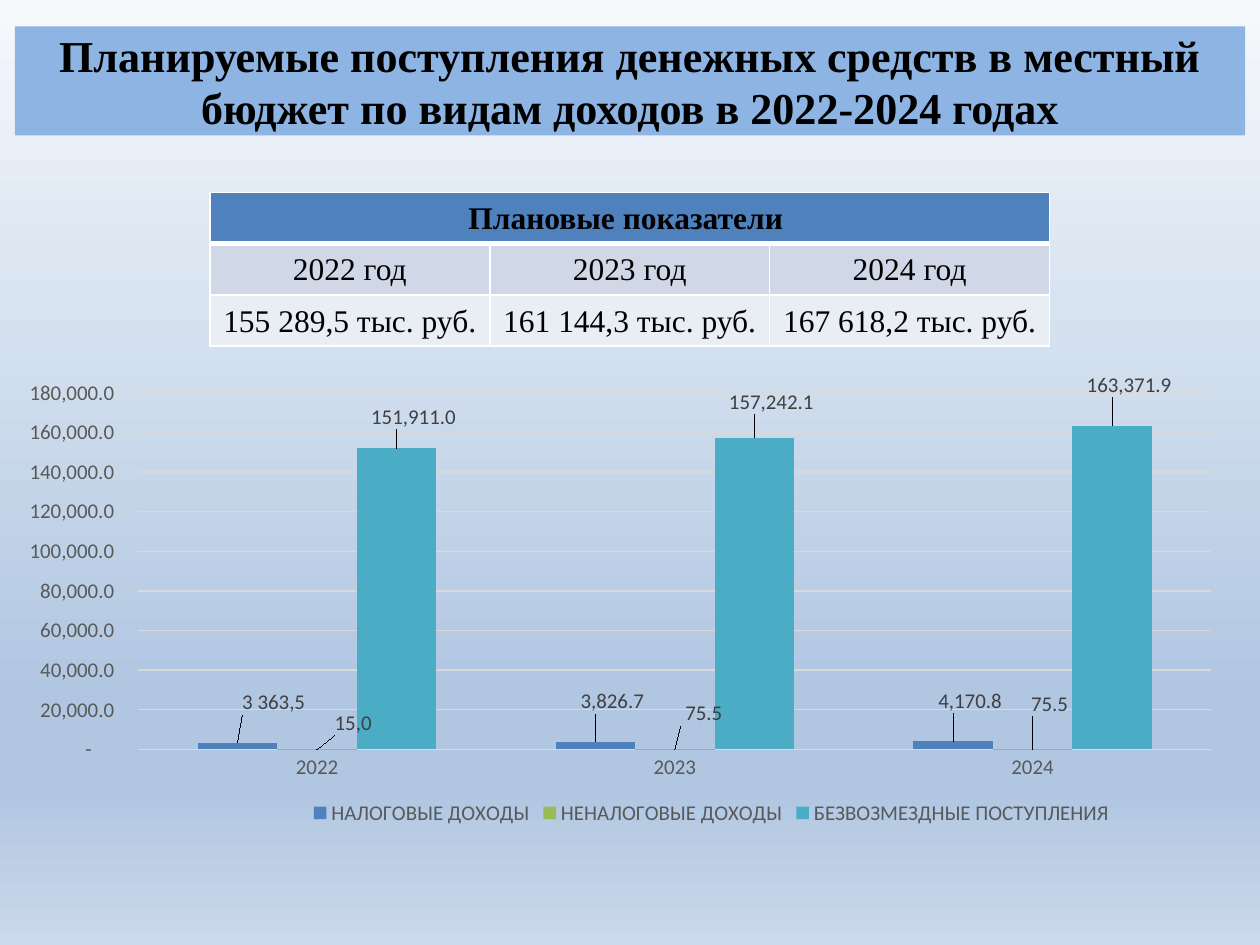
from copy import deepcopy
from dataclasses import dataclass

from lxml import etree
from pptx import Presentation
from pptx.chart.data import CategoryChartData
from pptx.dml.color import RGBColor
from pptx.enum.chart import XL_CHART_TYPE, XL_LABEL_POSITION, XL_LEGEND_POSITION, XL_TICK_MARK
from pptx.enum.text import MSO_ANCHOR, MSO_AUTO_SIZE, PP_ALIGN
from pptx.oxml import parse_xml
from pptx.oxml.ns import nsdecls, qn
from pptx.util import Cm, Pt

CENTER = PP_ALIGN.CENTER
MIDDLE = MSO_ANCHOR.MIDDLE
COLUMN = XL_CHART_TYPE.COLUMN_CLUSTERED
OUTSIDE_END = XL_LABEL_POSITION.OUTSIDE_END
BOTTOM = XL_LEGEND_POSITION.BOTTOM
NO_TICK = XL_TICK_MARK.NONE


@dataclass(frozen=True)
class Theme:
    serif: str = "Times New Roman"
    sans: str = "Calibri"
    title_size: float = 25.2
    table_size: float = 18
    chart_size: float = 12
    text: str = "000000"
    axis: str = "595959"
    label: str = "404040"
    grid: str = "D9D9D9"
    border: str = "FFFFFF"
    title_fill: str = "8EB4E3"
    row_fills: tuple = ("4F81BD", "D0D8E8", "E9EDF4")
    series: tuple = ("4F81BD", "9BBB59", "4BACC6")
    background: tuple = ((0, "F6F9FC"), (0.74, "B0C6E1"), (0.83, "B0C6E1"), (1, "CAD9EB"))


T = Theme()
TITLE = "Планируемые поступления денежных средств в местный бюджет по видам доходов в 2022-2024 годах"
TABLE = [
    ["Плановые показатели "],
    ["2022 год", "2023 год", "2024 год"],
    ["155 289,5 тыс. руб.", "161 144,3 тыс. руб.", "167 618,2 тыс. руб."],
]
YEARS = ["2022", "2023", "2024"]
NUMBER_FORMAT = r'_-* #,##0.0\ _₽_-;\-* #,##0.0\ _₽_-;_-* "-"??\ _₽_-;_-@_-'
# name, values, label offsets as shares of the chart, own text of the first label
SERIES = [
    ("НАЛОГОВЫЕ ДОХОДЫ", (3363.5, 3826.7, 4170.8),
     ((0.03, -0.05), (0.02, -0.05), (0.02, -0.05)), "3 363,5"),
    ("НЕНАЛОГОВЫЕ ДОХОДЫ", (15, 75.5, 75.5),
     ((0.03, -0.02), (0.03, -0.04), (0.02, -0.06)), "15,0"),
    ("БЕЗВОЗМЕЗДНЫЕ ПОСТУПЛЕНИЯ", (151911, 157242.1, 163371.9),
     ((0.02, -0.03), (0.02, -0.04), (0.02, -0.05)), None),
]


def rgb(value):
    return RGBColor.from_string(value)


def set_font(font, name, size, color, bold=False):
    font.name, font.size, font.bold = name, Pt(size), bold
    font.color.rgb = rgb(color)


def write(tf, text, align=CENTER, **fmt):
    p = tf.paragraphs[0]
    p.alignment = align
    r = p.add_run()
    r.text = text
    set_font(r.font, **fmt)


def layout_xml(**parts):
    """Manual chart layout; keys are the names of its elements."""
    body = "".join(f'<c:{key} val="{val}"/>' for key, val in parts.items())
    return parse_xml(f'<c:layout {nsdecls("c")}><c:manualLayout>{body}</c:manualLayout></c:layout>')


def add_background(s):
    fill = s.background.fill
    fill.gradient()
    fill.gradient_angle = 270
    stops = s._element.xpath(".//p:bg//a:gsLst")[0]
    for _ in T.background[2:]:
        stops.append(deepcopy(stops[0]))
    for stop, (position, color) in zip(fill.gradient_stops, T.background):
        stop.position = position
        stop.color.rgb = rgb(color)


def add_title(s, x, y, w, h):
    sp = s.shapes.title
    sp.left, sp.top, sp.width, sp.height = x, y, w, h
    sp.fill.solid()
    sp.fill.fore_color.rgb = rgb(T.title_fill)
    tf = sp.text_frame
    tf.word_wrap, tf.auto_size, tf.vertical_anchor = True, MSO_AUTO_SIZE.NONE, MIDDLE
    write(tf, TITLE, name=T.serif, size=T.title_size, color=T.text, bold=True)


def add_borders(cell, bottom):
    tcPr = cell._tc.get_or_add_tcPr()
    for i, (side, width) in enumerate((("L", 1), ("R", 1), ("T", 1), ("B", bottom))):
        ln = etree.Element(qn(f"a:ln{side}"), w=str(Pt(width)))
        fill = etree.SubElement(ln, qn("a:solidFill"))
        etree.SubElement(fill, qn("a:srgbClr"), val=T.border)
        tcPr.insert(i, ln)


def add_plan_table(s, x, y, w, h):
    rows, cols = len(TABLE), len(YEARS)
    table = s.shapes.add_table(rows, cols, x, y, w, h).table
    table.cell(0, 0).merge(table.cell(0, cols - 1))
    for i, texts in enumerate(TABLE):
        for j in range(cols):
            cell = table.cell(i, j)
            cell.margin_left = cell.margin_right = cell.margin_top = Cm(0.03)
            cell.margin_bottom = 0
            cell.vertical_anchor = MIDDLE
            cell.fill.solid()
            cell.fill.fore_color.rgb = rgb(T.row_fills[i])
            add_borders(cell, bottom=3 if i == 0 else 1)
            if j < len(texts):
                write(cell.text_frame, texts[j], name=T.serif, size=T.table_size,
                      color=T.text, bold=i == 0)


def add_labels(series, offsets, first_text):
    fmt = dict(name=T.sans, size=T.chart_size, color=T.label)
    labels = series.data_labels
    labels.show_value = True
    labels.position = OUTSIDE_END
    labels.number_format, labels.number_format_is_linked = NUMBER_FORMAT, False
    set_font(labels.font, **fmt)
    for i in range(len(offsets)):
        label = series.points[i].data_label
        if i == 0 and first_text:
            write(label.text_frame, first_text, **fmt)
        else:
            set_font(label.font, **fmt)
        label.position = OUTSIDE_END
    for dLbl, (dx, dy) in zip(series._element.xpath(".//c:dLbl"), offsets):
        dLbl.insert(1, layout_xml(x=dx, y=dy))


def add_income_chart(s, x, y, w, h):
    data = CategoryChartData(number_format=NUMBER_FORMAT)
    data.categories = YEARS
    for name, values, _, _ in SERIES:
        data.add_series(name, values)
    chart = s.shapes.add_chart(COLUMN, x, y, w, h, data).chart
    chart.has_title = False
    set_font(chart.font, T.sans, 10, T.text)

    # Axes and grid
    for axis in (chart.category_axis, chart.value_axis):
        axis.major_tick_mark = axis.minor_tick_mark = NO_TICK
        axis.format.line.fill.background()
        set_font(axis.tick_labels.font, T.sans, T.chart_size, T.axis)
    value_axis = chart.value_axis
    value_axis.minimum_scale, value_axis.maximum_scale, value_axis.major_unit = 0, 180000, 20000
    value_axis.tick_labels.number_format = NUMBER_FORMAT
    value_axis.tick_labels.number_format_is_linked = False
    line = value_axis.major_gridlines.format.line
    line.width, line.color.rgb = Pt(0.75), rgb(T.grid)

    # Columns
    plot = chart.plots[0]
    plot.gap_width, plot.overlap, plot.vary_by_categories = 150, 0, False
    for series, color, (_, _, offsets, first_text) in zip(plot.series, T.series, SERIES):
        series.format.fill.solid()
        series.format.fill.fore_color.rgb = rgb(color)
        add_labels(series, offsets, first_text)

    # Legend and plot area positions
    chart.has_legend = True
    legend = chart.legend
    legend.position, legend.include_in_layout = BOTTOM, False
    set_font(legend.font, T.sans, T.chart_size, T.axis)
    area = chart._chartSpace.xpath(".//c:plotArea")[0]
    for parent, index, layout in (
        (area, 0, layout_xml(layoutTarget="inner", xMode="edge", yMode="edge",
                             x=0.09, y=0.04, w=0.89, h=0.78)),
        (legend._element, 1, layout_xml(xMode="edge", yMode="edge", x=0.23, y=0.94)),
    ):
        for old in parent.findall(qn("c:layout")):
            parent.remove(old)
        parent.insert(index, layout)


def main():
    prs = Presentation()
    prs.slide_width, prs.slide_height = Cm(25.4), Cm(19.05)
    s = prs.slides.add_slide(prs.slide_layouts[5])
    add_background(s)
    add_title(s, Cm(0.3), Cm(0.53), Cm(24.8), Cm(2.2))
    add_plan_table(s, Cm(4.23), Cm(3.88), Cm(16.93), Cm(3.1))
    add_income_chart(s, Cm(0.5), Cm(7.52), Cm(24.41), Cm(9.25))
    prs.save("out.pptx")


if __name__ == "__main__":
    main()
